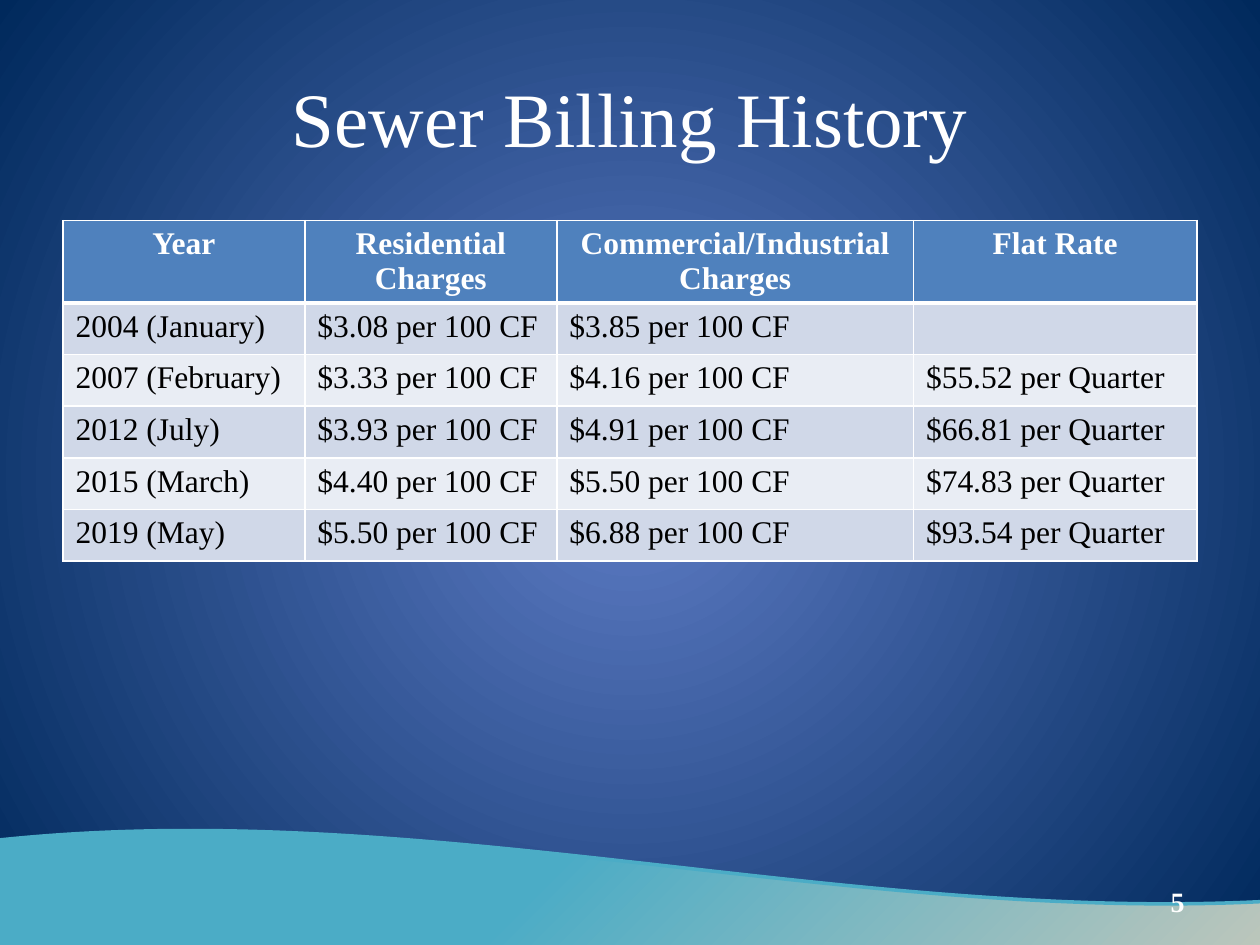
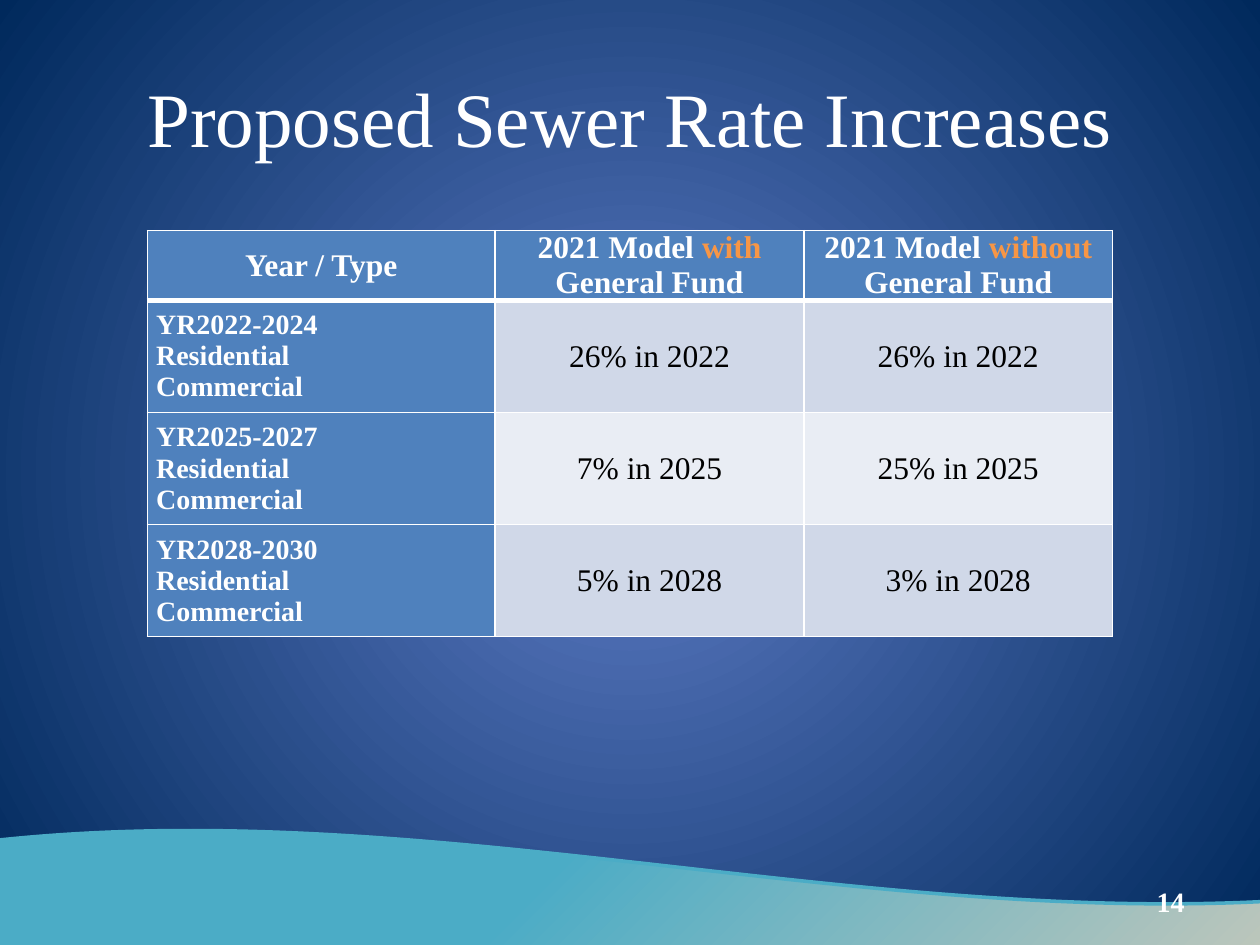
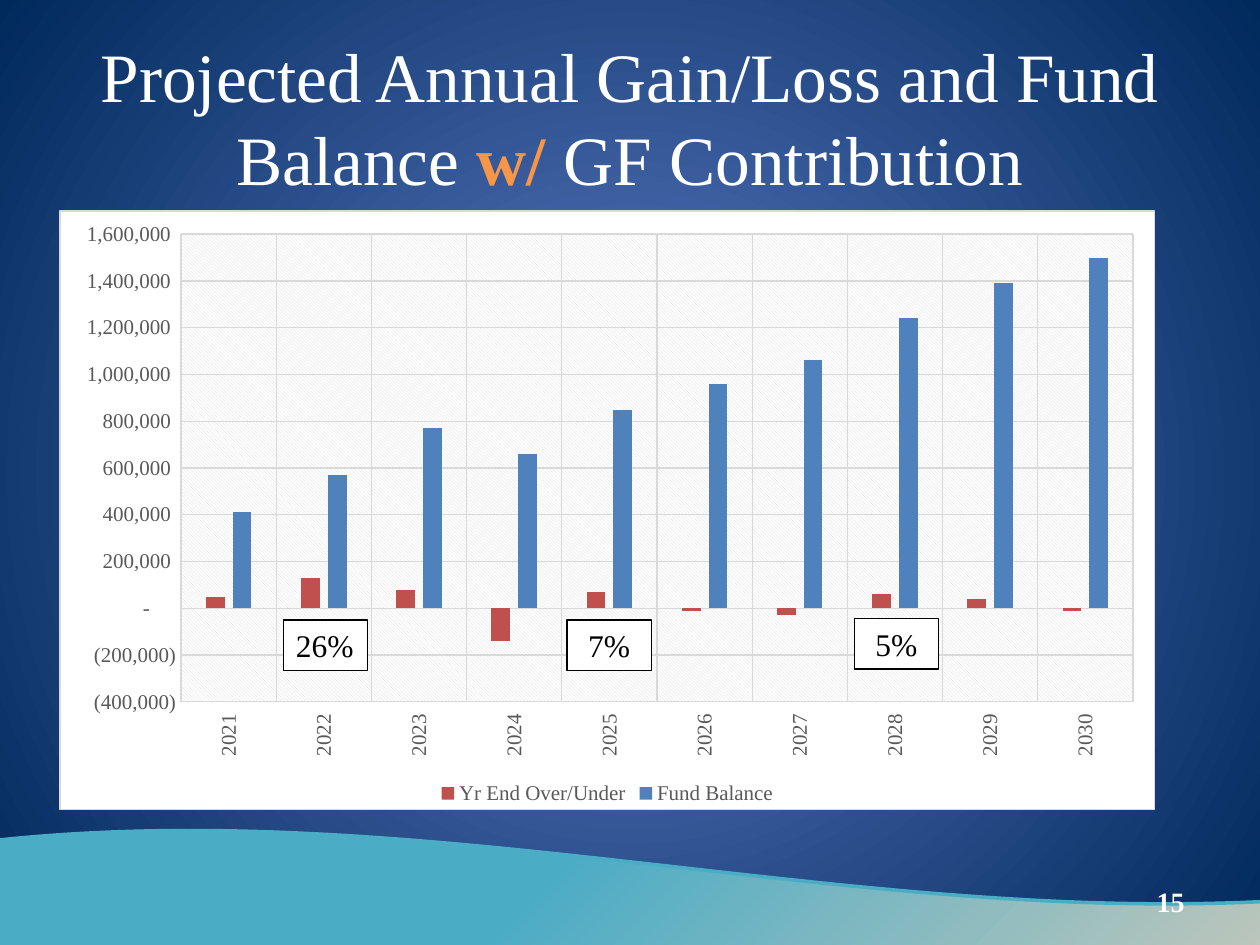
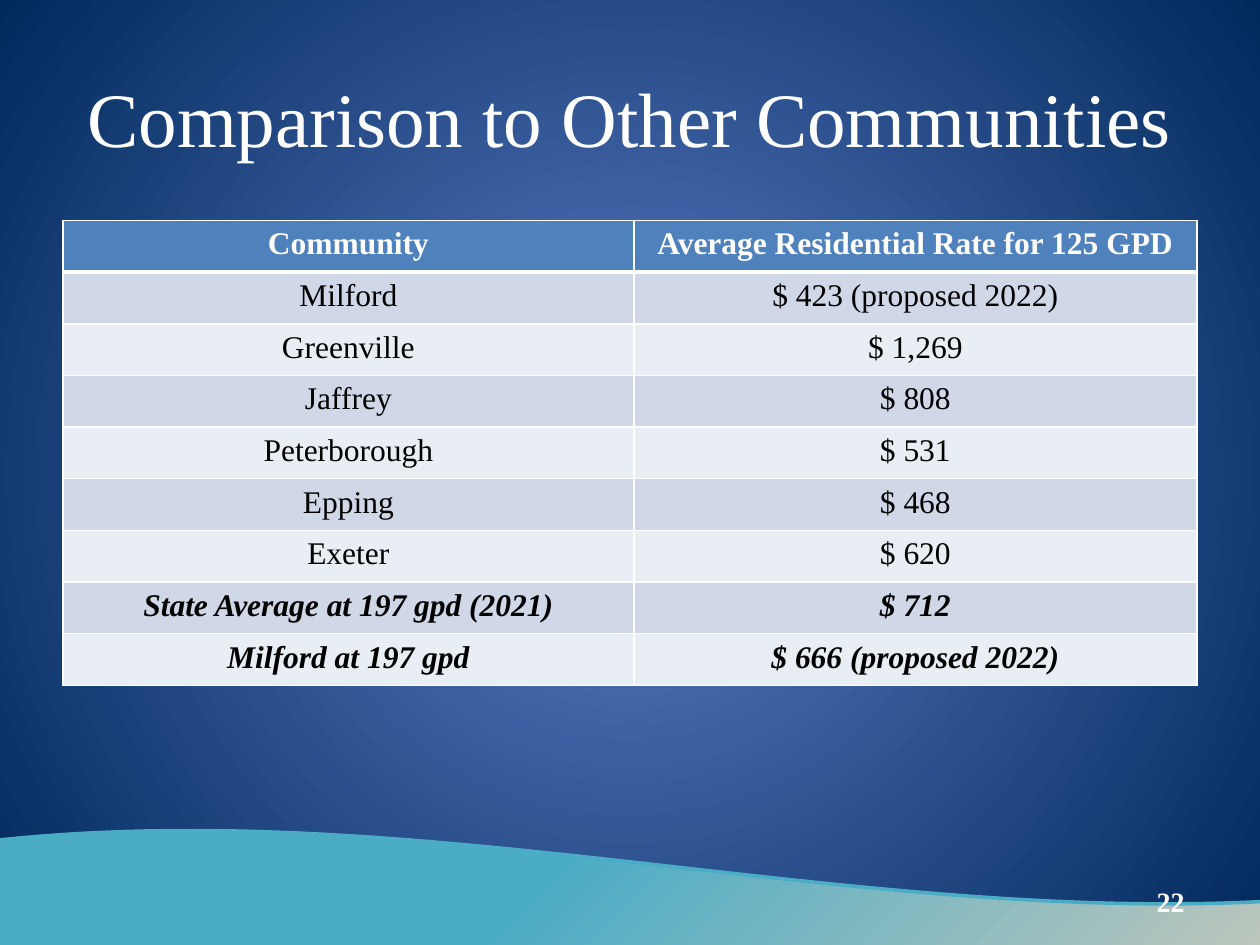
from lxml import etree
from pptx import Presentation
from pptx.chart.data import CategoryChartData
from pptx.dml.color import RGBColor
from pptx.enum.chart import XL_CHART_TYPE, XL_LEGEND_POSITION, XL_TICK_LABEL_POSITION, XL_TICK_MARK
from pptx.enum.shapes import MSO_SHAPE
from pptx.enum.text import MSO_ANCHOR, MSO_AUTO_SIZE, PP_ALIGN
from pptx.oxml import parse_xml
from pptx.oxml.ns import nsdecls, qn
from pptx.util import Emu, Pt

LEFT, CENTER, RIGHT, JUSTIFY = PP_ALIGN.LEFT, PP_ALIGN.CENTER, PP_ALIGN.RIGHT, PP_ALIGN.JUSTIFY
TOP, MIDDLE = MSO_ANCHOR.TOP, MSO_ANCHOR.MIDDLE
NO_FIT, GROW = MSO_AUTO_SIZE.NONE, MSO_AUTO_SIZE.SHAPE_TO_FIT_TEXT
WAVE, RECTANGLE = MSO_SHAPE.WAVE, MSO_SHAPE.RECTANGLE
COLUMNS, BOTTOM = XL_CHART_TYPE.COLUMN_CLUSTERED, XL_LEGEND_POSITION.BOTTOM
LOW, NO_TICK = XL_TICK_LABEL_POSITION.LOW, XL_TICK_MARK.NONE

EMU_PER_PX = 9144  # 100 px to the inch
FONT = "Times New Roman"
COLORS = {
    "white": "FFFFFF", "black": "000000", "sky": "5E7CC5", "navy": "00295C",
    "teal": "4BACC6", "sand": "FCD5B5", "blue": "4F81BD", "red": "C0504D",
    "orange": "F79646", "band": "D0D8E8", "pale": "E9EDF4",
    "gray": "595959", "grid": "D9D9D9",
}
ACCOUNTING = r'_(* #,##0_);_(* \(#,##0\);_(* "-"??_);_(@_)'
SLIDE_WIDTH, SLIDE_HEIGHT = 1000, 750
TITLE_AREA = (50, 30, 900, 125)
NUMBER_AREA = (717, 695, 233, 40)
WAVE_AREA = (-133, 658, 1342, 242)


def px(*lengths):
    return [Emu(length * EMU_PER_PX) for length in lengths]


def rgb(name):
    return RGBColor.from_string(COLORS[name])


# Text
def style_font(font, size, color, bold=False, italic=False):
    font.name, font.size = FONT, Pt(size)
    font.bold, font.italic = bold, italic
    font.color.rgb = rgb(color)


def write_text(frame, *paragraphs, align=LEFT, **style):
    """Each paragraph is a string or a list of (text, style changes)."""
    for index, spans in enumerate(paragraphs):
        para = frame.paragraphs[0] if index == 0 else frame.add_paragraph()
        para.alignment = align
        if isinstance(spans, str):
            spans = [(spans, {})]
        for text, changes in spans:
            if text:
                span = para.add_run()
                span.text = text
                style_font(span.font, **{**style, **changes})


# Gradients, shared background and wave
def set_radial(element, stops, focus):
    """Turn the gradient inside element into a circular one."""
    gradient = element.find(".//" + qn("a:gradFill"))
    marks = "".join(
        f'<a:gs pos="{position * 1000}"><a:srgbClr val="{COLORS[name]}"/></a:gs>'
        for position, name in stops)
    sides = " ".join(f'{side}="{value * 1000}"' for side, value in zip("ltrb", focus))
    gradient.getparent().replace(gradient, parse_xml(
        f'<a:gradFill {nsdecls("a")} rotWithShape="1"><a:gsLst>{marks}</a:gsLst>'
        f'<a:path path="circle"><a:fillToRect {sides}/></a:path></a:gradFill>'))


def set_background(master):
    master.background.fill.gradient()
    set_radial(master.element, [(0, "sky"), (100, "navy")], (50, 50, 50, 50))


def move_wave_to_master(slide, master):
    wave = slide.shapes.add_shape(WAVE, *px(*WAVE_AREA))
    wave.shadow.inherit = False
    wave.fill.gradient()
    set_radial(wave.element, [(0, "sand"), (62, "teal"), (100, "teal")], (100, 100, 0, 0))
    wave.line.color.rgb = rgb("teal")
    wave.line.width = Pt(2)
    master.shapes.element.insert(2, wave.element)


# Slide frame: title and page number
def add_page(deck, title, size=44):
    page = deck.slides.add_slide(deck.slide_layouts[5])
    box = page.shapes.title
    box.left, box.top, box.width, box.height = px(*TITLE_AREA)
    frame = box.text_frame
    frame.word_wrap, frame.auto_size, frame.vertical_anchor = True, NO_FIT, MIDDLE
    write_text(frame, title, align=CENTER, size=size, color="white")
    return page


def add_number(page, number):
    frame = page.shapes.add_textbox(*px(*NUMBER_AREA)).text_frame
    frame.word_wrap, frame.vertical_anchor = True, MIDDLE
    write_text(frame, str(number), align=RIGHT, size=16, color="white", bold=True)


# Tables
def set_borders(cell, row):
    widths = {"lnL": 1, "lnR": 1, "lnT": 3 if row == 1 else 1, "lnB": 3 if row == 0 else 1}
    properties = cell._tc.get_or_add_tcPr()
    for index, (edge, width) in enumerate(widths.items()):
        properties.insert(index, parse_xml(
            f'<a:{edge} {nsdecls("a")} w="{Pt(width)}"><a:solidFill>'
            f'<a:srgbClr val="{COLORS["white"]}"/></a:solidFill></a:{edge}>'))


def add_table(page, area, widths, heights, rows, align=CENTER, anchor=TOP,
              margins=(10, 5), side_heads=False, strong_rows=()):
    """Cells are strings, with line breaks between paragraphs, or span lists."""
    holder = page.shapes.add_table(len(rows), len(widths), *px(*area))
    table = holder.table
    for column, width in zip(table.columns, px(*widths)):
        column.width = width
    for row, height in zip(table.rows, px(*heights)):
        row.height = height
    holder.height = px(area[3])[0]
    for row, contents in enumerate(rows):
        for column, content in enumerate(contents):
            cell = table.cell(row, column)
            cell.margin_left, cell.margin_top = cell.margin_right, cell.margin_bottom = px(*margins)
            cell.vertical_anchor = anchor
            side = side_heads and column == 0 and row > 0
            head = row == 0 or side
            cell.fill.solid()
            cell.fill.fore_color.rgb = rgb("blue" if head else "band" if row % 2 else "pale")
            set_borders(cell, row)
            paragraphs = content.split("\n") if isinstance(content, str) else [content]
            write_text(cell.text_frame, *paragraphs,
                       align=JUSTIFY if side else CENTER if head else align,
                       size=16 if side else 18, color="white" if head else "black",
                       bold=head or row in strong_rows, italic=row in strong_rows)


# Chart
def style_axis(axis):
    axis.major_tick_mark = axis.minor_tick_mark = NO_TICK
    style_font(axis.tick_labels.font, 12, "gray")
    axis.has_major_gridlines = True
    for line in (axis.major_gridlines.format.line, axis.format.line):
        line.color.rgb = rgb("grid")
        line.width = Pt(0.75)


def style_chart_areas(chart):
    solid = '<a:solidFill><a:srgbClr val="{}"/></a:solidFill>'
    opening = f'<c:spPr {nsdecls("c", "a")}>'
    chart_area = parse_xml(
        f'{opening}{solid.format(COLORS["white"])}'
        f'<a:ln w="{Pt(0.75)}">{solid.format(COLORS["grid"])}</a:ln></c:spPr>')
    plot_area = parse_xml(
        f'{opening}<a:pattFill prst="ltDnDiag"><a:fgClr><a:srgbClr val="{COLORS["grid"]}"/></a:fgClr>'
        f'<a:bgClr><a:srgbClr val="{COLORS["white"]}"/></a:bgClr></a:pattFill></c:spPr>')
    body = chart.element.find(qn("c:chart"))
    body.addnext(chart_area)
    etree.ElementBase.append(body.find(qn("c:plotArea")), plot_area)


def add_column_chart(page, area, categories, series):
    """Series are (name, colour, values)."""
    data = CategoryChartData(number_format=ACCOUNTING)
    data.categories = categories
    for name, _, values in series:
        data.add_series(name, values)
    chart = page.shapes.add_chart(COLUMNS, *px(*area), data).chart
    chart.has_title = False
    style_font(chart.font, 10, "white")
    chart.has_legend = True
    chart.legend.position, chart.legend.include_in_layout = BOTTOM, False
    style_font(chart.legend.font, 12, "gray")

    plot = chart.plots[0]
    plot.gap_width, plot.overlap, plot.vary_by_categories = 267, -43, False
    for columns, (_, color, _) in zip(plot.series, series):
        columns.invert_if_negative = False
        columns.format.fill.solid()
        columns.format.fill.fore_color.rgb = rgb(color)

    years, amounts = chart.category_axis, chart.value_axis
    style_axis(years)
    style_axis(amounts)
    years.tick_label_position = LOW
    turned = chart.element.find(".//" + "/".join(map(qn, ("c:catAx", "c:txPr", "a:bodyPr"))))
    turned.set("rot", "-5400000")
    turned.set("vert", "horz")
    amounts.format.line.fill.background()
    amounts.minimum_scale, amounts.maximum_scale, amounts.major_unit = -400000, 1600000, 200000
    amounts.tick_labels.number_format = ACCOUNTING
    amounts.tick_labels.number_format_is_linked = False
    style_chart_areas(chart)


def add_label(page, left, top, text, align=CENTER):
    box = page.shapes.add_shape(RECTANGLE, *px(left, top, 67, 40))
    box.shadow.inherit = False
    box.fill.solid()
    box.fill.fore_color.rgb = rgb("white")
    box.line.color.rgb = rgb("black")
    box.line.width = Pt(0.75)
    frame = box.text_frame
    frame.word_wrap, frame.auto_size, frame.vertical_anchor = True, GROW, TOP
    write_text(frame, text, align=align, size=18, color="black")


# Slides
def build_history(deck):
    page = add_page(deck, "Sewer Billing History")
    rates = [
        ("2004 (January)", "3.08", "3.85", ""),
        ("2007 (February)", "3.33", "4.16", "$55.52 per Quarter"),
        ("2012 (July)", "3.93", "4.91", "$66.81 per Quarter"),
        ("2015 (March)", "4.40", "5.50", "$74.83 per Quarter"),
        ("2019 (May)", "5.50", "6.88", "$93.54 per Quarter"),
    ]
    rows = [("Year", "Residential Charges", "Commercial/Industrial Charges", "Flat Rate")]
    rows += [(year, f"${home} per 100 CF", f"${business} per 100 CF", flat)
             for year, home, business, flat in rates]
    add_table(page, (50, 175, 900, 273), (192, 200, 283, 225), [41] * len(rows), rows, align=LEFT)
    add_number(page, 5)
    return page


def build_increases(deck):
    page = add_page(deck, "Proposed Sewer Rate Increases")
    heads = [[("2021 Model ", {}), (word, {"color": "orange"}), ("General Fund", {})]
             for word in ("with ", "without ")]
    increases = [
        ("2022-2024", "26% in 2022", "26% in 2022"),
        ("2025-2027", "7% in 2025", "25% in 2025"),
        ("2028-2030", "5% in 2028", "3% in 2028"),
    ]
    rows = [("Year / Type", *heads)]
    rows += [(f"YR{years}\nResidential\nCommercial", *changes) for years, *changes in increases]
    add_table(page, (117, 183, 767, 326), (276, 245, 245), (30, 89, 89, 89), rows,
              anchor=MIDDLE, margins=(7, 0), side_heads=True)
    add_number(page, 14)


def build_projection(deck):
    page = add_page(deck, [
        ("Projected Annual Gain/Loss and Fund Balance ", {}),
        ("w/", {"color": "orange", "bold": True}),
        (" GF Contribution", {})], size=39.6)
    add_column_chart(page, (47, 167, 870, 476), [str(year) for year in range(2021, 2031)], [
        ("Yr End Over/Under", "red",
         (50000, 130000, 80000, -140000, 70000, -10000, -30000, 60000, 40000, -10000)),
        ("Fund Balance", "blue",
         (410000, 570000, 770000, 660000, 850000, 960000, 1060000, 1240000, 1390000, 1500000)),
    ])
    add_label(page, 225, 492, "26%", align=LEFT)
    add_label(page, 450, 492, "7%")
    add_label(page, 678, 491, "5%")
    add_number(page, 15)


def build_comparison(deck):
    page = add_page(deck, "Comparison to Other Communities")
    rows = [
        ("Community", "Average Residential Rate for 125 GPD"),
        ("Milford", "$ 423 (proposed 2022)"),
        ("Greenville", "$ 1,269"),
        ("Jaffrey", "$ 808"),
        ("Peterborough", "$ 531"),
        ("Epping", "$ 468"),
        ("Exeter", "$ 620"),
        ("State Average at 197 gpd (2021)", "$ 712"),
        ("Milford at 197 gpd", "$ 666 (proposed 2022)"),
    ]
    add_table(page, (50, 175, 900, 365), (453, 447), [41] * len(rows), rows,
              margins=(13, 5), strong_rows=(7, 8))
    add_number(page, 22)


def main():
    deck = Presentation()
    deck.slide_width, deck.slide_height = px(SLIDE_WIDTH, SLIDE_HEIGHT)
    set_background(deck.slide_master)
    first_page = build_history(deck)
    move_wave_to_master(first_page, deck.slide_master)
    build_increases(deck)
    build_projection(deck)
    build_comparison(deck)
    deck.save("out.pptx")


if __name__ == "__main__":
    main()
